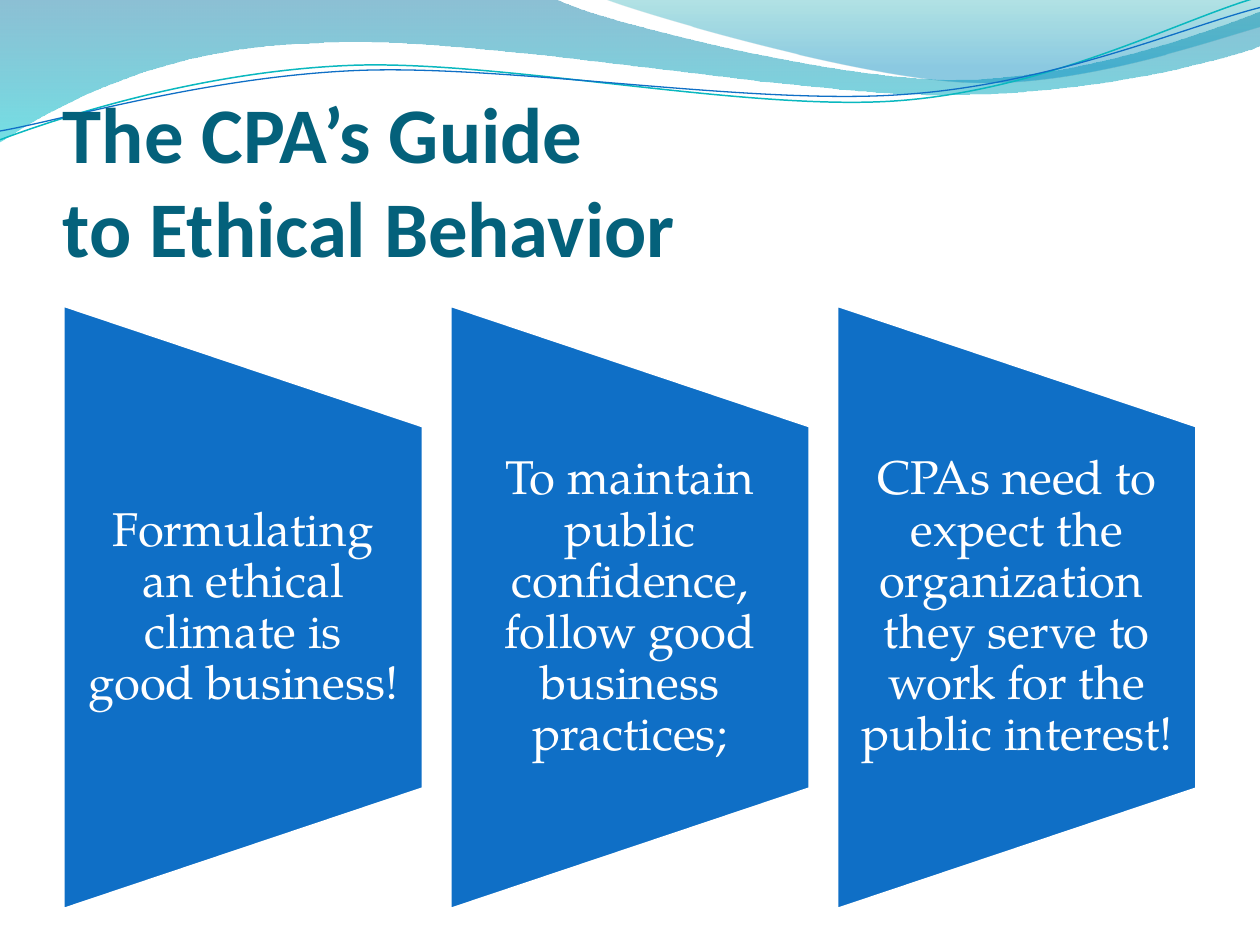
from lxml import etree
from pptx import Presentation
from pptx.dml.color import RGBColor
from pptx.enum import shapes, text
from pptx.oxml.ns import qn
from pptx.util import Emu, Inches, Pt

# Content
TITLE = ["The CPA’s Guide ", "to Ethical Behavior"]
PANELS = [
    "Formulating an ethical climate is good business!",
    "To maintain public confidence, follow good business practices;",
    "CPAs need to expect the organization  they serve to work for the public interest!",
]

# Waves: a pair is a straight segment, six numbers are a Bezier curve (inches)
# Gradient stops: position, colour, opacity in percent
BANDS = [
    ([(0, 0), (4.4, -0.01),
      (4.76, 0.17, 6.64, 0.63, 7.58, 0.63), (8.53, 0.63, 9.58, 0.26, 10, 0.09),
      (10.01, 0.36),
      (9.83, 0.44, 8.7, 0.76, 7.46, 0.75), (6.22, 0.75, 3.82, 0.28, 2.57, 0.34),
      (1.29, 0.36, 0.46, 0.83, -0.01, 1.13), (0, 0)],
     [(0, "0074A1", 45), (1, "00C6CF", 55)]),
    ([(4.79, -0.01),
      (5.09, 0.11, 6.82, 0.62, 7.69, 0.65), (8.56, 0.69, 9.61, 0.32, 10, 0.21),
      (10, 0), (4.79, -0.01)],
     [(0, "00A1A9", 30), (0.8, "008BBF", 45)]),
]
STRANDS = [
    ([(0, 1.11),
      (0.48, 0.93, 1.58, 0.57, 2.77, 0.52), (3.95, 0.47, 5.93, 0.89, 7.13, 0.8),
      (8.33, 0.71, 9.38, 0.15, 9.98, -0.02)], "0AB8BF", 0.85),
    ([(0, 1.04),
      (0.47, 0.96, 1.64, 0.61, 2.83, 0.56), (4.03, 0.51, 5.97, 0.84, 7.17, 0.75),
      (8.36, 0.67, 9.41, 0.21, 10, 0.06)], "0F6FC6", 0.75),
]

# Panel grid
LEFT, PITCH, PANEL_W, PANEL_H, CENTER_Y = 0.5, 3.07, 2.86, 4.8, 4.82
LABEL_H = 2.88


def rgb(color):
    return RGBColor.from_string(color)


def add_wave(s, path, close):
    points = [(Inches(seg[-2]), Inches(seg[-1])) for seg in path]
    builder = s.shapes.build_freeform(*points[0])
    builder.add_line_segments(points[1:], close=close)
    sp = builder.convert_to_shape(Emu(0), Emu(0))
    sp.shadow.inherit = False
    # Turn the straight segments that have control points into curves
    segments = list(sp._element.spPr.iter(qn("a:lnTo")))
    for node, seg in zip(segments, path[1:]):
        if len(seg) == 6:
            node.tag = qn("a:cubicBezTo")
            for i in (0, 2):
                pt = etree.Element(qn("a:pt"), x=str(Inches(seg[i]) - sp.left),
                                   y=str(Inches(seg[i + 1]) - sp.top))
                node.insert(i // 2, pt)
    return sp


def add_band(s, path, stops):
    sp = add_wave(s, path, True)
    sp.line.fill.background()
    sp.fill.gradient()
    sp.fill.gradient_angle = 270
    for stop, (position, color, _) in zip(sp.fill.gradient_stops, stops):
        stop.position = position
        stop.color.rgb = rgb(color)
    # Opacity of each stop
    for clr, (_, _, opacity) in zip(sp._element.spPr.iter(qn("a:srgbClr")), stops):
        etree.SubElement(clr, qn("a:alpha"), val=str(opacity * 1000))


def add_strand(s, path, color, width):
    sp = add_wave(s, path, False)
    sp.fill.background()
    sp.line.color.rgb = rgb(color)
    sp.line.width = Pt(width)


def add_text(s, box, lines, font, size, color, anchor, align, margins,
             bold=False, spacing=None):
    tf = s.shapes.add_textbox(*map(Inches, box)).text_frame
    tf.word_wrap = True
    tf.vertical_anchor = anchor
    tf.margin_left, tf.margin_top, tf.margin_right, tf.margin_bottom = map(Inches, margins)
    p = tf.paragraphs[0]
    p.alignment = align
    p.line_spacing = spacing
    for i, line in enumerate(lines):
        if i:
            p.add_line_break()
        r = p.add_run()
        r.text = line
        r.font.name, r.font.size, r.font.bold = font, Pt(size), bold
        r.font.color.rgb = rgb(color)


def add_panel(s, left, label):
    # The shape is laid out flat, then turned about its centre
    sp = s.shapes.add_shape(
        shapes.MSO_SHAPE.FLOWCHART_MANUAL_OPERATION,
        Inches(left + (PANEL_W - PANEL_H) / 2), Inches(CENTER_Y - PANEL_W / 2),
        Inches(PANEL_H), Inches(PANEL_W))
    sp.rotation = 270
    sp.shadow.inherit = False
    sp.fill.solid()
    sp.fill.fore_color.rgb = rgb("0F6FC6")
    sp.line.color.rgb = rgb("FFFFFF")
    sp.line.width = Pt(2)
    add_text(s, (left, CENTER_Y - LABEL_H / 2, PANEL_W, LABEL_H), [label],
             "TeX Gyre Pagella", 27, "FFFFFF", text.MSO_ANCHOR.MIDDLE,
             text.PP_ALIGN.CENTER, (0.19, 0, 0.19, 0), spacing=0.9)


def main():
    prs = Presentation()
    prs.slide_width, prs.slide_height = Inches(10), Inches(7.5)
    s = prs.slides.add_slide(prs.slide_layouts[6])

    # Wave decoration
    for band in BANDS:
        add_band(s, *band)
    for strand in STRANDS:
        add_strand(s, *strand)

    # Title
    add_text(s, (0.5, 0.92, 9, 1.25), TITLE, "Calibri", 45, "04617B",
             text.MSO_ANCHOR.BOTTOM, text.PP_ALIGN.LEFT, (0, 0.05, 0, 0), bold=True)

    # Panels
    for i, label in enumerate(PANELS):
        add_panel(s, LEFT + i * PITCH, label)

    prs.save("out.pptx")


if __name__ == "__main__":
    main()
